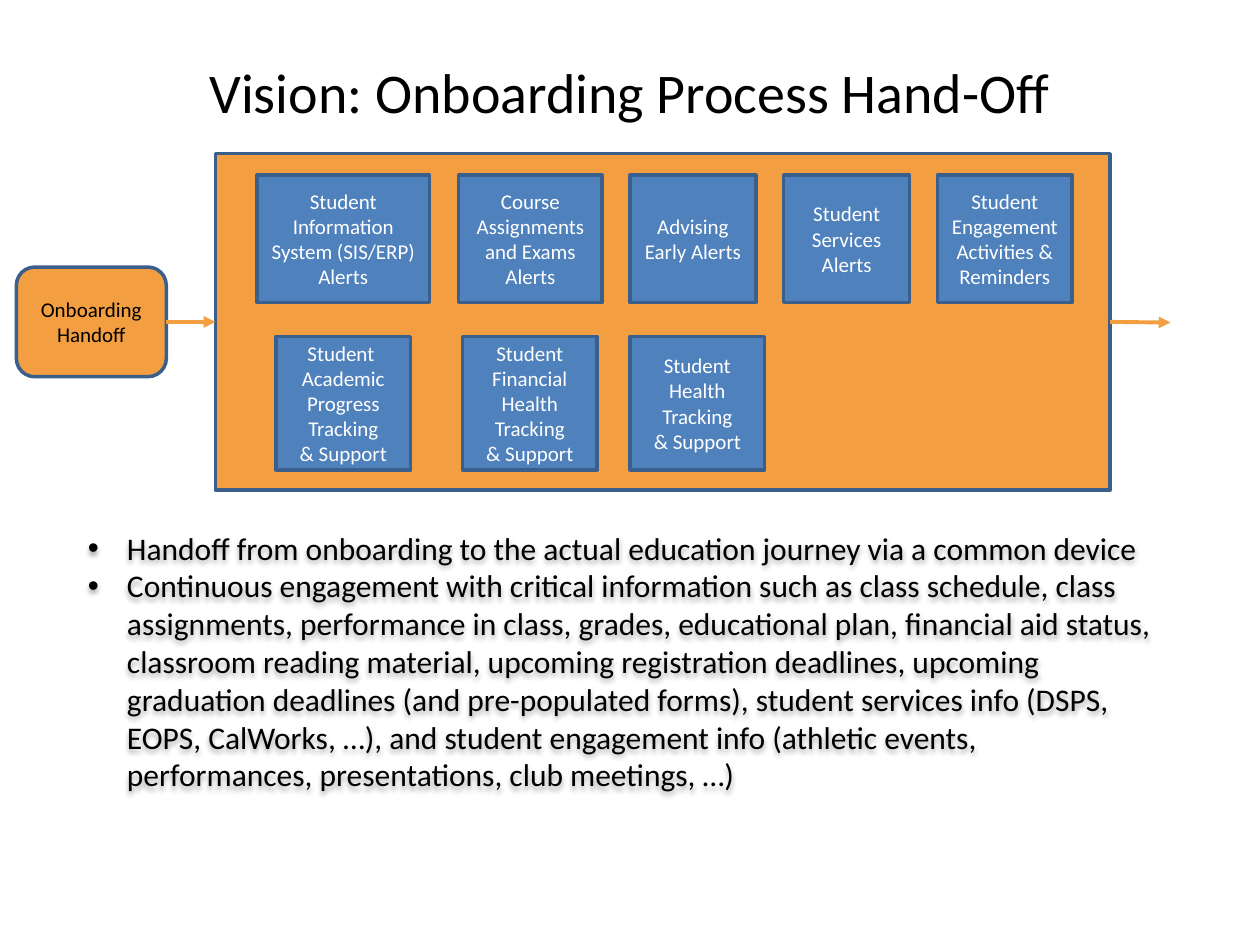
from dataclasses import dataclass

from lxml.etree import SubElement
from pptx import Presentation
from pptx.dml.color import RGBColor
from pptx.enum.shapes import MSO_CONNECTOR, MSO_SHAPE
from pptx.enum.text import MSO_ANCHOR, PP_ALIGN
from pptx.oxml.ns import qn
from pptx.util import Inches, Pt


@dataclass(frozen=True)
class Theme:
    font: str = "Calibri"
    orange: str = "F39F41"
    blue: str = "4F81BD"
    outline: str = "3A5F8C"
    dark: str = "000000"
    light: str = "FFFFFF"
    title_size: int = 32
    body_size: int = 18
    box_size: int = 12
    outline_width: float = 2
    arrow_width: float = 2.25


class SlideBuilder:
    def __init__(self, slide, theme):
        self.slide = slide
        self.theme = theme

    def style_text(self, frame, size, color, align):
        for paragraph in frame.paragraphs:
            paragraph.alignment = align
            for run in paragraph.runs:
                run.font.name = self.theme.font
                run.font.size = Pt(size)
                run.font.color.rgb = RGBColor.from_string(color)

    def title(self, text, left, top, width, height):
        heading = self.slide.shapes.title
        heading.left, heading.top = Inches(left), Inches(top)
        heading.width, heading.height = Inches(width), Inches(height)
        frame = heading.text_frame
        frame.text = text
        frame.vertical_anchor = MSO_ANCHOR.TOP
        self.style_text(frame, self.theme.title_size, self.theme.dark, PP_ALIGN.CENTER)

    def box(self, text, left, top, width, height, fill, color, kind=MSO_SHAPE.RECTANGLE):
        box = self.slide.shapes.add_shape(
            kind, Inches(left), Inches(top), Inches(width), Inches(height))
        box.shadow.inherit = False
        box.fill.solid()
        box.fill.fore_color.rgb = RGBColor.from_string(fill)
        box.line.color.rgb = RGBColor.from_string(self.theme.outline)
        box.line.width = Pt(self.theme.outline_width)
        frame = box.text_frame
        frame.text = text
        frame.word_wrap = True
        frame.vertical_anchor = MSO_ANCHOR.MIDDLE
        self.style_text(frame, self.theme.box_size, color, PP_ALIGN.CENTER)
        return box

    def arrow(self, source, end, target=None):
        """Arrow from the right side of source to a point or a target's left side."""
        start = (source.left + source.width, source.top + source.height // 2)
        arrow = self.slide.shapes.add_connector(
            MSO_CONNECTOR.STRAIGHT, *start, Inches(end[0]), Inches(end[1]))
        arrow.begin_connect(source, 3)
        if target is not None:
            arrow.end_connect(target, 1)
        arrow.line.color.rgb = RGBColor.from_string(self.theme.orange)
        arrow.line.width = Pt(self.theme.arrow_width)
        SubElement(arrow.line._get_or_add_ln(), qn("a:tailEnd"), type="triangle")
        SubElement(arrow._element.spPr, qn("a:effectLst"))

    def bullets(self, items, left, top, width, height, indent):
        notes = self.slide.shapes.add_textbox(
            Inches(left), Inches(top), Inches(width), Inches(height))
        frame = notes.text_frame
        frame.text = "\n".join(items)
        frame.word_wrap = True
        frame.vertical_anchor = MSO_ANCHOR.MIDDLE
        for paragraph in frame.paragraphs:
            properties = paragraph._p.get_or_add_pPr()
            properties.set("marL", str(Inches(indent)))
            properties.set("indent", str(-Inches(indent)))
            SubElement(properties, qn("a:buFont"), typeface="Arial")
            SubElement(properties, qn("a:buChar"), char="•")
        self.style_text(frame, self.theme.body_size, self.theme.dark, PP_ALIGN.LEFT)
        # Soft shadow below the letters
        effects = SubElement(notes._element.spPr, qn("a:effectLst"))
        shadow = SubElement(effects, qn("a:outerShdw"), blurRad=str(Pt(3)),
                            dist=str(Pt(2)), dir="5400000", rotWithShape="0")
        tint = SubElement(shadow, qn("a:srgbClr"), val=self.theme.dark)
        SubElement(tint, qn("a:alpha"), val="35000")


# Text, left and width of the boxes in each row
ALERTS = [
    ("Student Information\nSystem (SIS/ERP)\nAlerts", 2.04, 1.37),
    ("Course\nAssignments and Exams\nAlerts", 3.64, 1.14),
    ("Advising\nEarly Alerts", 5, 1),
    ("Student Services Alerts", 6.22, 1),
    ("Student Engagement\nActivities & Reminders", 7.44, 1.07),
]
TRACKING = [
    ("Student \nAcademic Progress Tracking\n& Support", 2.19, 1.07),
    ("Student Financial Health Tracking\n& Support", 3.67, 1.07),
    ("Student Health Tracking\n& Support", 5, 1.07),
]
ROWS = [(ALERTS, 1.39, 1.01), (TRACKING, 2.67, 1.06)]
NOTES = [
    "Handoff from onboarding to the actual education journey via a common device",
    "Continuous engagement with critical information such as class schedule, class "
    "assignments, performance in class, grades, educational plan, financial aid status, "
    "classroom reading material, upcoming registration deadlines, upcoming graduation "
    "deadlines (and pre-populated forms), student services info (DSPS, EOPS, CalWorks, …), "
    "and student engagement info (athletic events, performances, presentations, "
    "club meetings, …)",
]


def main():
    deck = Presentation()
    deck.slide_width, deck.slide_height = Inches(10), Inches(7.5)
    theme = Theme()
    builder = SlideBuilder(deck.slides.add_slide(deck.slide_layouts[5]), theme)

    # Title and the journey panel
    builder.title("Vision: Onboarding Process Hand-Off", 0, 0.41, 10, 0.81)
    journey = builder.box("", 1.71, 1.22, 7.1, 2.67, theme.orange, theme.dark)

    # Explanation below the panel
    builder.bullets(NOTES, 0.6, 4.07, 8.7, 2.35, indent=0.31)

    # Handoff into and out of the journey
    handoff = builder.box("Onboarding Handoff", 0.13, 2.12, 1.19, 0.87,
                          theme.orange, theme.dark, MSO_SHAPE.ROUNDED_RECTANGLE)
    builder.arrow(handoff, (1.71, 2.55), journey)
    builder.arrow(journey, (9.29, 2.56))

    # Alert and tracking services
    for services, top, height in ROWS:
        for text, left, width in services:
            builder.box(text, left, top, width, height, theme.blue, theme.light)

    deck.save("out.pptx")


if __name__ == "__main__":
    main()
